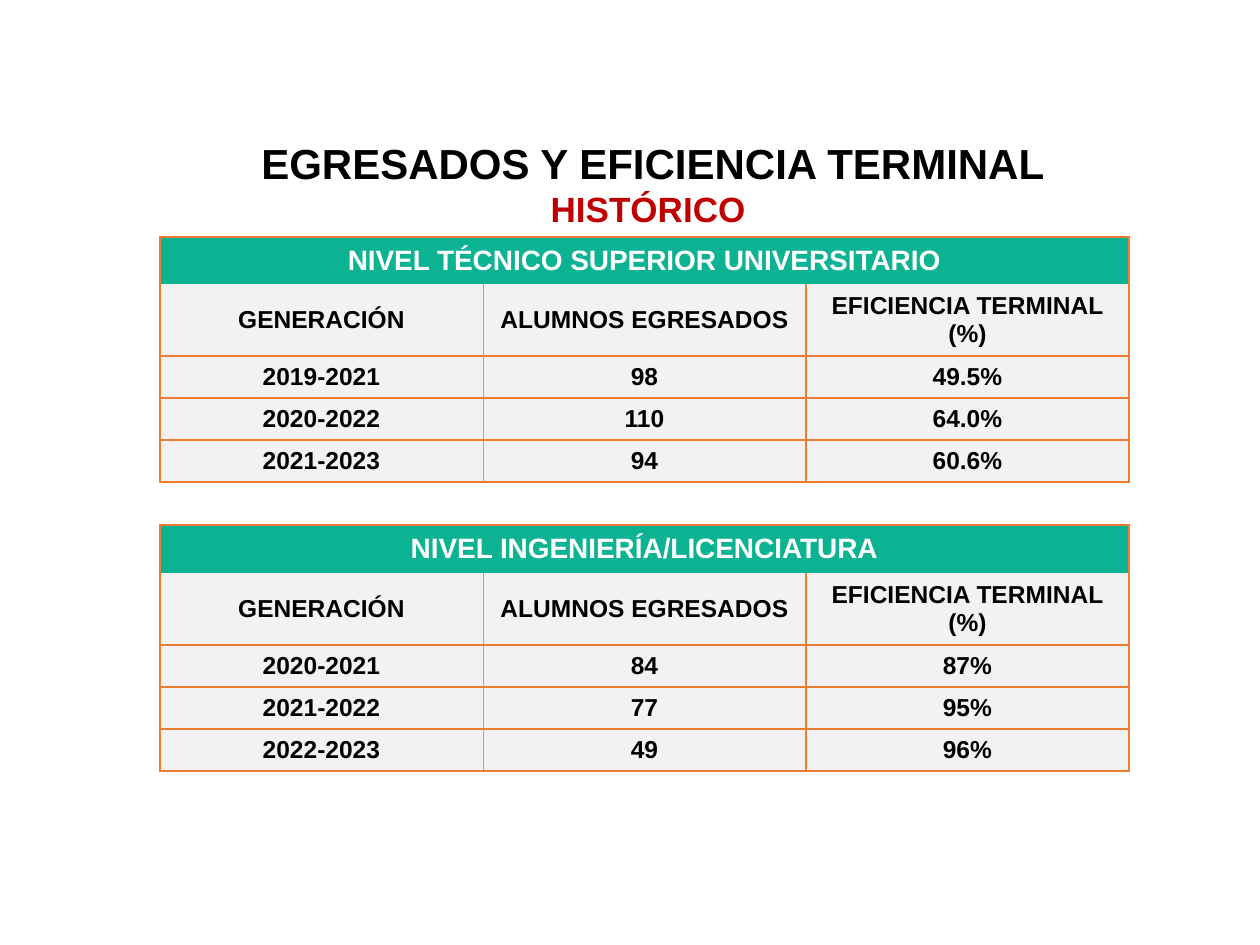
from lxml import etree
from pptx import Presentation
from pptx import util as u
from pptx.dml.color import RGBColor
from pptx.enum import text
from pptx.oxml.ns import qn

SCALE = 914400 / 126


def px(n):
    return u.Emu(round(n * SCALE))


def color(value):
    return RGBColor.from_string(value)


class Deck:
    FONT = "Arial"
    BLACK, WHITE, RED = "000000", "FFFFFF", "C00000"
    GREEN, LIGHT = "0CB393", "F2F2F2"
    EDGE, INNER = ("ED7D31", 1), ("A6A6A6", 0.5)

    def __init__(self, width, height):
        self.prs = Presentation()
        self.prs.slide_width, self.prs.slide_height = px(width), px(height)
        self.s = self.prs.slides.add_slide(self.prs.slide_layouts[5])

    def style(self, p, size, hex_color):
        p.alignment = text.PP_ALIGN.CENTER
        p.font.name, p.font.size, p.font.bold = self.FONT, u.Pt(size), True
        p.font.color.rgb = color(hex_color)

    def title(self, x, y, w, h, lines):
        sp = self.s.shapes.title
        sp.left, sp.top, sp.width, sp.height = map(px, (x, y, w, h))
        tf = sp.text_frame
        tf.word_wrap = True
        tf.auto_size = text.MSO_AUTO_SIZE.SHAPE_TO_FIT_TEXT
        tf.vertical_anchor = text.MSO_ANCHOR.TOP
        tf.text = "\n".join(line for line, _, _ in lines)
        for p, (_, size, hex_color) in zip(tf.paragraphs, lines):
            self.style(p, size, hex_color)

    def borders(self, cell, **sides):
        """Draw each side (L, R, T, B) as a (colour, points) pair, or none."""
        tc_pr = cell._tc.get_or_add_tcPr()
        for i, side in enumerate("LRTB"):
            ln = etree.Element(qn(f"a:ln{side}"))
            if sides[side]:
                hex_color, width = sides[side]
                ln.set("w", str(u.Pt(width)))
                fill = etree.SubElement(ln, qn("a:solidFill"))
                etree.SubElement(fill, qn("a:srgbClr"), val=hex_color)
            else:
                etree.SubElement(ln, qn("a:noFill"))
            tc_pr.insert(i, ln)

    def table(self, x, y, col_width, heights, heading, rows):
        cols = len(rows[0])
        frame = self.s.shapes.add_table(len(heights), cols, px(x), px(y),
                                        px(col_width * cols), px(sum(heights)))
        table = frame.table
        table.first_row = table.horz_banding = False
        for col in table.columns:
            col.width = px(col_width)
        for row, height in zip(table.rows, heights):
            row.height = px(height)
        table.cell(0, 0).merge(table.cell(0, cols - 1))

        for r, values in enumerate([[heading] + [""] * (cols - 1), *rows]):
            for c, value in enumerate(values):
                cell = table.cell(r, c)
                cell.text = value
                cell.vertical_anchor = text.MSO_ANCHOR.MIDDLE
                cell.fill.solid()
                cell.fill.fore_color.rgb = color(self.LIGHT if r else self.GREEN)
                self.style(cell.text_frame.paragraphs[0], 14 if r else 16,
                           self.BLACK if r else self.WHITE)
                self.borders(cell,
                             L=self.INNER if r and c == 1 else self.EDGE,
                             R=self.INNER if r and c == 0 else self.EDGE,
                             T=None if r == 1 else self.EDGE,
                             B=self.EDGE if r else None)


def main():
    deck = Deck(1260, 945)
    labels = ("GENERACIÓN", "ALUMNOS EGRESADOS", "EFICIENCIA TERMINAL (%)")
    levels = [
        (237, 47, "NIVEL TÉCNICO SUPERIOR UNIVERSITARIO",
         [("2019-2021", "98", "49.5%"),
          ("2020-2022", "110", "64.0%"),
          ("2021-2023", "94", "60.6%")]),
        (525, 48, "NIVEL INGENIERÍA/LICENCIATURA",
         [("2020-2021", "84", "87%"),
          ("2021-2022", "77", "95%"),
          ("2022-2023", "49", "96%")]),
    ]
    for top, heading_height, heading, records in levels:
        heights = [heading_height, 72] + [42] * len(records)
        deck.table(160, top, 323, heights, heading, [labels, *records])
    deck.title(246, 131, 814, 106, [
        ("EGRESADOS Y EFICIENCIA TERMINAL", 24, deck.BLACK),
        ("HISTÓRICO ", 20, deck.RED),
    ])
    deck.prs.save("out.pptx")


if __name__ == "__main__":
    main()
